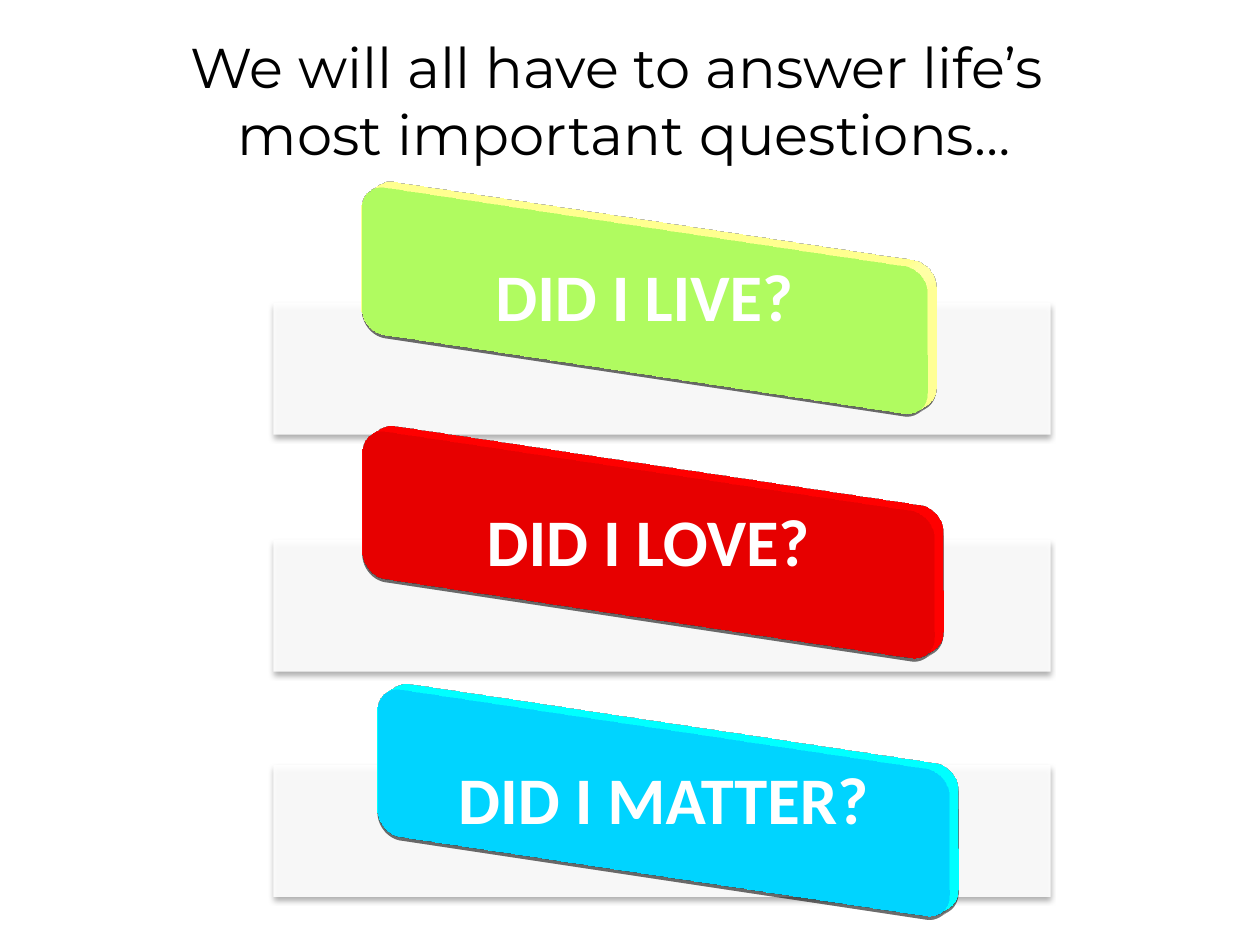
"""Build a slide of three slanted question blocks under a title."""
from dataclasses import dataclass

from lxml import etree
from pptx import Presentation
from pptx.dml.color import RGBColor
from pptx.enum.shapes import MSO_SHAPE
from pptx.enum.text import MSO_ANCHOR, PP_ALIGN
from pptx.oxml.ns import qn
from pptx.util import Pt

RECT = MSO_SHAPE.RECTANGLE
ROUNDED = MSO_SHAPE.ROUNDED_RECTANGLE
CENTER = PP_ALIGN.CENTER
MIDDLE = MSO_ANCHOR.MIDDLE


@dataclass(frozen=True)
class Theme:
    title_font: str = "Montserrat"
    block_font: str = "Calibri"
    title_size: int = 32
    block_size: int = 38
    black: str = "000000"
    white: str = "FFFFFF"
    green: str = "92D050"
    red: str = "C00000"
    blue: str = "00B0F0"


def write(tf, text, font, size, color, bold=False, spacing=1.0):
    p = tf.paragraphs[0]
    p.text = text
    p.alignment = CENTER
    p.line_spacing = spacing
    for r in p.runs:
        r.font.name = font
        r.font.size = Pt(size)
        r.font.bold = bold
        r.font.color.rgb = RGBColor.from_string(color)


def add(parent, tag, **attributes):
    return etree.SubElement(parent, qn(tag), **attributes)


class Deck:
    def __init__(self, prs, theme):
        self.theme = theme
        self.s = prs.slides.add_slide(prs.slide_layouts[6])

    def text(self, x, y, w, h, text, margin=7.2, **style):
        sp = self.s.shapes.add_textbox(Pt(x), Pt(y), Pt(w), Pt(h))
        tf = sp.text_frame
        tf.word_wrap = True
        tf.vertical_anchor = MIDDLE
        tf.margin_left = tf.margin_right = Pt(margin)
        tf.margin_top = tf.margin_bottom = 0
        write(tf, text, **style)

    def shape(self, kind, x, y, w, h, color):
        sp = self.s.shapes.add_shape(kind, Pt(x), Pt(y), Pt(w), Pt(h))
        sp.shadow.inherit = False
        sp.fill.solid()
        sp.fill.fore_color.rgb = RGBColor.from_string(color)
        sp.line.fill.background()
        pr = sp._element.spPr
        shadow = add(pr.find(qn("a:effectLst")), "a:outerShdw",
                     blurRad=str(Pt(3.1)), dist=str(Pt(1.8)),
                     dir="5400000", rotWithShape="0")
        tint = add(shadow, "a:srgbClr", val=self.theme.black)
        add(tint, "a:alpha", val="35000")
        return pr

    def panel(self, x, y, w, h):
        pr = self.shape(RECT, x, y, w, h, self.theme.white)
        fill = pr.find(qn("a:solidFill")).find(qn("a:srgbClr"))
        add(fill, "a:alpha", val="90000")

    def block(self, x, y, w, h, text, color, inset=4.3):
        t = self.theme
        pr = self.shape(ROUNDED, x, y, w, h, color)
        scene = add(pr, "a:scene3d")
        add(scene, "a:camera", prst="isometricOffAxis2Left", zoom="95000")
        add(scene, "a:lightRig", rig="flat", dir="t")
        add(pr, "a:sp3d", extrusionH=str(Pt(12)), prstMaterial="plastic")
        self.text(x + inset, y + inset, w - 2 * inset, h - 2 * inset, text,
                  margin=11.5, font=t.block_font, size=t.block_size,
                  color=t.white, bold=True, spacing=0.9)


def main():
    prs = Presentation()
    prs.slide_width, prs.slide_height = Pt(720), Pt(540)
    t = Theme()
    deck = Deck(prs, t)
    deck.text(12, 12, 690, 90,
              "We will all have to answer life’s \vmost important questions…",
              font=t.title_font, size=t.title_size, color=t.black)
    questions = [
        (172.8, 188.6, 127.4, 359.3, "DID I LIVE?", t.green),
        (308.2, 188.6, 267.1, 363.6, "DID I LOVE?", t.red),
        (437, 197.3, 414.7, 363.6, "DID I MATTER?", t.blue),
    ]
    for panel_y, x, y, w, text, color in questions:
        deck.panel(156.2, panel_y, 444.2, 75.6)
        deck.block(x, y, w, 88.6, text, color)
    prs.save("out.pptx")


if __name__ == "__main__":
    main()
